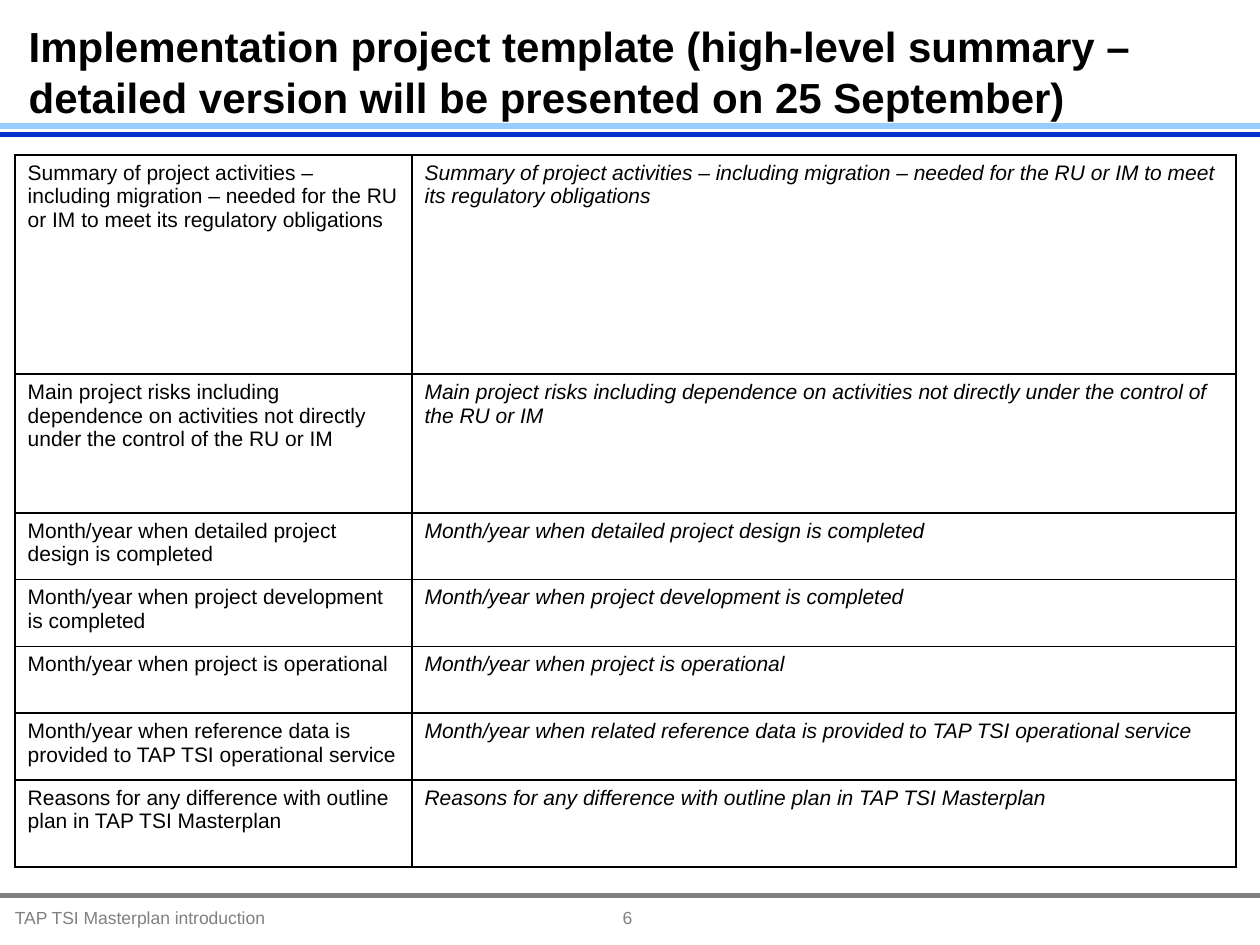
from pptx import Presentation
from pptx.dml.color import RGBColor
from pptx.enum.shapes import MSO_CONNECTOR
from pptx.enum.text import MSO_ANCHOR, PP_ALIGN
from pptx.oxml.ns import qn
from pptx.util import Inches, Pt
from lxml.etree import SubElement

BLACK, GRAY, LIGHT_BLUE, BLUE = "000000", "808080", "99CCFF", "0033CC"
COLUMN_WIDTHS = [3.15, 6.54]
# Row height, item, and guidance where it differs from the item
ROWS = [
    (1.74, "Summary of project activities – including migration – needed for "
           "the RU or IM to meet its regulatory obligations", None),
    (1.1, "Main project risks including dependence on activities not directly "
          "under the control of the RU or IM", None),
    (0.53, "Month/year when detailed project design is completed", None),
    (0.53, "Month/year when project development is completed", None),
    (0.53, "Month/year when project is operational", None),
    (0.53, "Month/year when reference data is provided to TAP TSI operational service",
     "Month/year when related reference data is provided to TAP TSI operational service"),
    (0.69, "Reasons for any difference with outline plan in TAP TSI Masterplan", None),
]


def color(value):
    return RGBColor.from_string(value)


def style_font(font, size, value, bold=False, italic=False):
    font.name = "Arial"
    font.size = Pt(size)
    font.color.rgb = color(value)
    font.bold = bold
    font.italic = italic


def add_text(slide, left, top, width, height, text, size, value,
             bold=False, align=PP_ALIGN.LEFT):
    shape = slide.shapes.add_textbox(
        Inches(left), Inches(top), Inches(width), Inches(height))
    frame = shape.text_frame
    frame.word_wrap = True
    frame.vertical_anchor = MSO_ANCHOR.MIDDLE
    paragraph = frame.paragraphs[0]
    paragraph.text = text
    paragraph.alignment = align
    style_font(paragraph.font, size, value, bold)


def add_rule(slide, left, right, top, value):
    line = slide.shapes.add_connector(
        MSO_CONNECTOR.STRAIGHT, Inches(left), Inches(top), Inches(right), Inches(top))
    line.line.color.rgb = color(value)
    line.line.width = Pt(3)
    SubElement(line._element.spPr, qn("a:effectLst"))


def add_header(slide, left, top, width):
    add_text(slide, left + 0.13, top + 0.21, width - 0.13, 0.71,
             "Implementation project template (high-level summary – "
             "detailed version will be presented on 25 September)",
             24, BLACK, bold=True)
    for offset, value in ((1, LIGHT_BLUE), (1.07, BLUE)):
        add_rule(slide, left - 0.03, left + width + 0.01, top + offset, value)


def add_footer(slide, left, top, width):
    add_rule(slide, left, left + width, top, GRAY)
    add_text(slide, left + 0.02, top + 0.04, 4.33, 0.27,
             "TAP TSI Masterplan introduction", 10, GRAY)
    add_text(slide, left + 4.69, top + 0.04, 0.58, 0.27, "6", 10, GRAY,
             align=PP_ALIGN.CENTER)


def set_borders(cell):
    """Draw a thin black line on all four sides of the cell."""
    properties = cell._tc.get_or_add_tcPr()
    for position, side in enumerate(("a:lnL", "a:lnR", "a:lnT", "a:lnB")):
        border = properties.makeelement(qn(side), {"w": str(Pt(1))})
        fill = SubElement(border, qn("a:solidFill"))
        SubElement(fill, qn("a:srgbClr"), val=BLACK)
        properties.insert(position, border)


def fill_cell(cell, text, italic):
    cell.fill.background()
    set_borders(cell)
    paragraph = cell.text_frame.paragraphs[0]
    paragraph.text = text
    paragraph.space_before = paragraph.space_after = Pt(2)
    style_font(paragraph.font, 12, BLACK, italic=italic)


def add_project_table(slide, left, top):
    height = sum(row[0] for row in ROWS)
    table = slide.shapes.add_table(
        len(ROWS), len(COLUMN_WIDTHS), Inches(left), Inches(top),
        Inches(sum(COLUMN_WIDTHS)), Inches(height)).table
    table.first_row = table.horz_banding = False
    for column, width in zip(table.columns, COLUMN_WIDTHS):
        column.width = Inches(width)
    for index, (row_height, item, guidance) in enumerate(ROWS):
        table.rows[index].height = Inches(row_height)
        fill_cell(table.cell(index, 0), item, italic=False)
        fill_cell(table.cell(index, 1), guidance or item, italic=True)


def main():
    presentation = Presentation()
    presentation.slide_width = Inches(10)
    presentation.slide_height = Inches(7.5)
    slide = presentation.slides.add_slide(presentation.slide_layouts[6])
    add_footer(slide, 0, 7.11, 10)
    add_header(slide, 0, 0, 10)
    add_project_table(slide, 0.12, 1.23)
    presentation.save("out.pptx")


if __name__ == "__main__":
    main()
